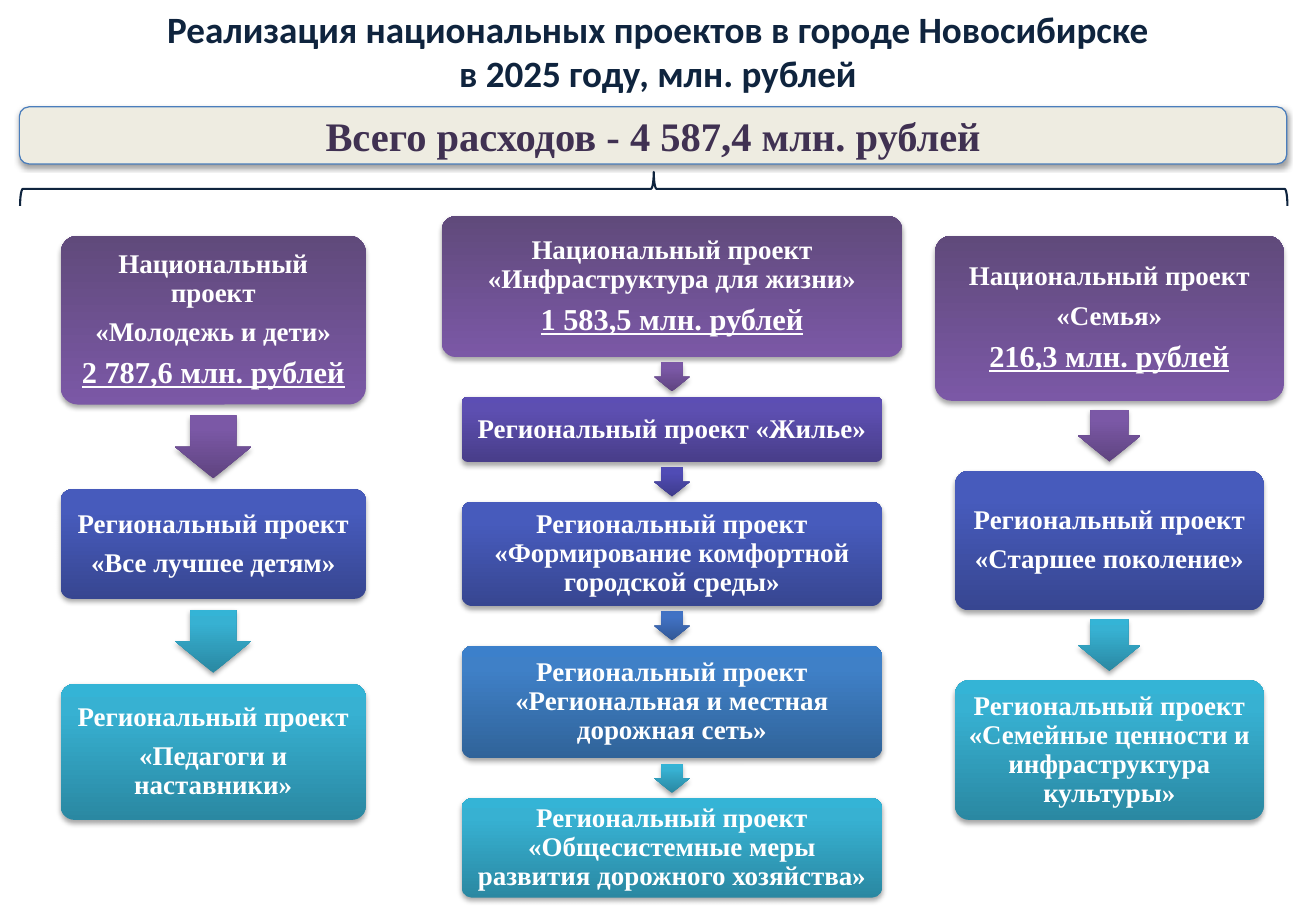
from lxml import etree
from pptx import Presentation
from pptx.dml.color import RGBColor
from pptx.enum import shapes, text
from pptx.oxml.ns import qn
from pptx.util import Inches, Pt

NAVY = "0F243E"
SERIF = "Times New Roman"
PRESET = shapes.MSO_SHAPE

NATIONAL = [(0, "7B58A6"), (100, "604A7B")]
PURPLE = [(0, "5F4480"), (80, "7B58A6"), (100, "7C57A8")]
VIOLET = [(0, "483D89"), (80, "5D4FB1"), (100, "5C4EB4")]
INDIGO = [(0, "3E3B8B"), (80, "504CB5"), (100, "4F4BB8")]
ROYAL = [(0, "374691"), (80, "475BBC"), (100, "455ABF")]
COBALT = [(0, "325897"), (80, "4172C4"), (100, "3F72C7")]
BLUE = [(0, "306399"), (80, "3F80C7"), (100, "3C80CB")]
TEAL = [(0, "2A88A2"), (80, "37B1D2"), (100, "34B4D6")]

# Each program: center, top, bottom, national width, regional width,
# then steps of height, box gradient, gradient of the arrow above, paragraphs.
PROGRAMS = [
    (1.755, 1.94, 6.75, 2.51, 2.51, [
        (1.39, NATIONAL, None,
         ["Национальный проект", "«Молодежь и дети»", "2 787,6 млн. рублей"]),
        (0.90, ROYAL, PURPLE, ["Региональный проект", "«Все лучшее детям»"]),
        (1.12, TEAL, TEAL, ["Региональный проект", "«Педагоги и наставники»"]),
    ]),
    (5.53, 1.78, 7.39, 3.79, 3.46, [
        (1.16, NATIONAL, None,
         ["Национальный проект «Инфраструктура для жизни»",
          "1 583,5 млн. рублей"]),
        (0.54, VIOLET, PURPLE, ["Региональный проект «Жилье»"]),
        (0.86, ROYAL, INDIGO,
         ["Региональный проект «Формирование комфортной городской среды»"]),
        (0.93, BLUE, COBALT,
         ["Региональный проект «Региональная и местная дорожная сеть»"]),
        (0.82, TEAL, TEAL,
         ["Региональный проект «Общесистемные меры развития дорожного хозяйства»"]),
    ]),
    (9.13, 1.94, 6.75, 2.87, 2.54, [
        (1.36, NATIONAL, None,
         ["Национальный проект", "«Семья»", "216,3 млн. рублей"]),
        (1.15, ROYAL, PURPLE, ["Региональный проект", "«Старшее поколение»"]),
        (1.15, TEAL, TEAL,
         ["Региональный проект «Семейные ценности и инфраструктура культуры»"]),
    ]),
]


def rgb(color):
    return RGBColor.from_string(color)


def format_run(run, size, font, color):
    run.font.size = Pt(size)
    run.font.name = font
    run.font.bold = True
    run.font.color.rgb = rgb(color)


def add_figure(slide, preset, left, top, width, height):
    figure = slide.shapes.add_shape(
        preset, Inches(left), Inches(top), Inches(width), Inches(height))
    figure.shadow.inherit = False
    return figure


def add_shadow(figure, opacity, distance):
    effects = figure._element.spPr.find(qn("a:effectLst"))
    shadow = etree.SubElement(
        effects, qn("a:outerShdw"), blurRad=str(Pt(3.1)),
        dist=str(Pt(distance)), dir="5400000", rotWithShape="0")
    color = etree.SubElement(shadow, qn("a:srgbClr"), val="000000")
    etree.SubElement(color, qn("a:alpha"), val=str(opacity * 1000))


def fill_gradient(figure, stops):
    figure.fill.gradient()
    figure.fill.gradient_angle = 90
    stop_list = figure._element.spPr.find(qn("a:gradFill")).find(qn("a:gsLst"))
    for stop in list(stop_list):
        stop_list.remove(stop)
    for position, color in stops:
        stop = etree.SubElement(stop_list, qn("a:gs"), pos=str(position * 1000))
        etree.SubElement(stop, qn("a:srgbClr"), val=color)
    figure.line.fill.background()
    add_shadow(figure, 35, 1.8)


def add_project(slide, center, top, width, height, stops, lines, national):
    project = add_figure(slide, PRESET.ROUNDED_RECTANGLE,
                         center - width / 2, top, width, height)
    project.adjustments[0] = 0.1
    fill_gradient(project, stops)
    frame = project.text_frame
    frame.word_wrap = True
    frame.vertical_anchor = text.MSO_ANCHOR.MIDDLE
    frame.margin_left = frame.margin_right = Inches(0.07)
    frame.margin_top = frame.margin_bottom = Inches(0.07)
    frame.text = "\n".join(lines)
    for paragraph in frame.paragraphs:
        paragraph.alignment = text.PP_ALIGN.CENTER
        paragraph.line_spacing = 0.9
        paragraph.space_after = Pt(6)
        format_run(paragraph.runs[0], 16, SERIF, "FFFFFF")
    if national:
        amount = frame.paragraphs[-1].runs[0]
        amount.font.size = Pt(18)
        amount.font.underline = True


def add_arrow(slide, center, middle, gap, stops):
    height = gap * 0.74
    width = height * 1.21
    arrow = add_figure(slide, PRESET.DOWN_ARROW, center - width / 2,
                       middle - height / 2, width, height)
    arrow.adjustments[0] = 0.6
    arrow.adjustments[1] = 0.5
    fill_gradient(arrow, stops)


def add_program(slide, center, top, bottom, national_width, regional_width, steps):
    boxes = sum(step[0] for step in steps)
    gap = (bottom - top - boxes) / (len(steps) - 1)
    for height, stops, arrow_stops, lines in steps:
        national = arrow_stops is None
        if not national:
            add_arrow(slide, center, top - gap / 2, gap, arrow_stops)
        width = national_width if national else regional_width
        add_project(slide, center, top, width, height, stops, lines, national)
        top += height + gap


def set_title(slide):
    title = slide.shapes.title
    title.left, title.top = Inches(0), Inches(0)
    title.width, title.height = Inches(10.83), Inches(0.84)
    frame = title.text_frame
    frame.text = ("Реализация национальных проектов в городе Новосибирске\n"
                  "в 2025 году, млн. рублей")
    frame.word_wrap = True
    frame.auto_size = text.MSO_AUTO_SIZE.NONE
    frame.vertical_anchor = text.MSO_ANCHOR.TOP
    for paragraph in frame.paragraphs:
        paragraph.alignment = text.PP_ALIGN.CENTER
        format_run(paragraph.runs[0], 22, "Calibri", NAVY)


def add_total(slide):
    total = add_figure(slide, PRESET.ROUNDED_RECTANGLE, 0.16, 0.88, 10.43, 0.47)
    total.fill.solid()
    total.fill.fore_color.rgb = rgb("EEECE1")
    total.line.color.rgb = rgb("4B7EBC")
    total.line.width = Pt(0.75)
    add_shadow(total, 38, 1.6)
    frame = total.text_frame
    frame.text = "Всего расходов - 4 587,4 млн. рублей"
    frame.vertical_anchor = text.MSO_ANCHOR.MIDDLE
    frame.paragraphs[0].alignment = text.PP_ALIGN.CENTER
    format_run(frame.paragraphs[0].runs[0], 24, SERIF, "403152")


def add_brace(slide):
    brace = add_figure(slide, PRESET.LEFT_BRACE, 5.24, -3.66, 0.28, 10.43)
    brace.rotation = 90
    brace.fill.background()
    brace.line.color.rgb = rgb(NAVY)
    brace.line.width = Pt(1.25)


def main():
    deck = Presentation()
    deck.slide_width, deck.slide_height = Inches(10.83), Inches(7.5)
    slide = deck.slides.add_slide(deck.slide_layouts[5])
    set_title(slide)
    add_total(slide)
    add_brace(slide)
    for program in PROGRAMS:
        add_program(slide, *program)
    deck.save("out.pptx")


if __name__ == "__main__":
    main()
